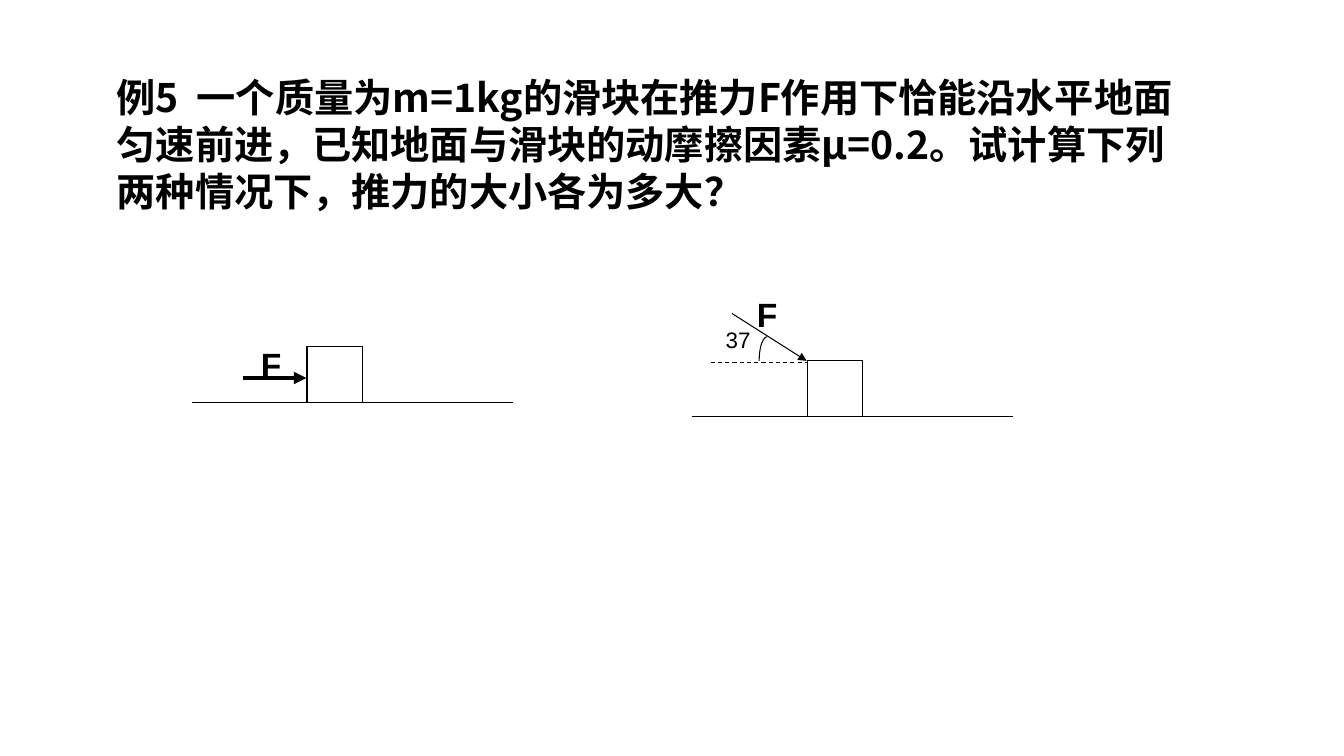
from pptx import Presentation, util as u
from pptx.dml.color import RGBColor
from pptx.enum import dml, shapes, text
from pptx.oxml.ns import qn
from lxml import etree

theme = {
    "ink": RGBColor(0, 0, 0),
    "head": "Noto Sans CJK SC",
    "body": "Arial",
    "title": 28,
    "force": 24,
    "angle": 16,
    "thin": 0.75,
    "thick": 3,
}

deck = Presentation()
deck.slide_width, deck.slide_height = u.Inches(13.33), u.Inches(7.5)
slide = deck.slides.add_slide(deck.slide_layouts[6])


def write(home, words, box, size, font, bold=True):
    label = home.add_textbox(*map(u.Inches, box))
    frame = label.text_frame
    frame.word_wrap = True
    frame.auto_size = text.MSO_AUTO_SIZE.SHAPE_TO_FIT_TEXT
    frame.text = words
    run = frame.paragraphs[0].runs[0]
    run.font.size, run.font.bold = u.Pt(size), bold
    run.font.name, run.font.color.rgb = font, theme["ink"]
    etree.SubElement(run.font._element, qn("a:ea")).set("typeface", font)
    return frame


def draw(home, start, end, width=theme["thin"], arrow=False, dash=False):
    line = home.add_connector(
        shapes.MSO_CONNECTOR.STRAIGHT, *map(u.Inches, (*start, *end)))
    line.line.width = u.Pt(width)
    line.line.color.rgb = theme["ink"]
    if dash:
        line.line.dash_style = dml.MSO_LINE.DASH
    if arrow:
        tip = etree.SubElement(line.line._get_or_add_ln(), qn("a:tailEnd"))
        tip.set("type", "triangle")
    etree.SubElement(line._element.spPr, qn("a:effectLst"))


title = write(
    slide.shapes,
    "例5  一个质量为m=1kg的滑块在推力F作用下恰能沿水平地面匀速前进，"
    "已知地面与滑块的动摩擦因素μ=0.2。试计算下列两种情况下，推力的大小各为多大？",
    (1.06, 0.63, 10.68, 1.51), theme["title"], theme["head"])
title.margin_top = u.Inches(0.1)
title.paragraphs[0].line_spacing = u.Pt(33.6)

side, span, lead = 0.55, 3.19, 1.145
scenes = []
for left, floor, tag in ((1.9, 3.99, (2.49, 3.36)), (6.86, 4.13, (7.41, 2.87))):
    home = slide.shapes.add_group_shape().shapes
    block = home.add_shape(
        shapes.MSO_SHAPE.RECTANGLE,
        *map(u.Inches, (left + lead, floor - side, side, side)))
    block.fill.background()
    block.line.color.rgb = theme["ink"]
    block.line.width = u.Pt(theme["thin"])
    block.shadow.inherit = False
    draw(home, (left, floor), (left + span, floor))
    write(home, "F", (*tag, 0.47, 0.5), theme["force"], theme["body"])
    scenes.append(home)

push, slant = scenes
draw(push, (2.41, 3.75), (3.04, 3.75), theme["thick"], arrow=True)
draw(slant, (7.26, 3.11), (8, 3.58), arrow=True)
draw(slant, (7.05, 3.6), (8, 3.6), dash=True)
write(slant, "37", (7.1, 3.19, 0.47, 0.37), theme["angle"], theme["body"], False)

arc = slant.add_shape(
    shapes.MSO_SHAPE.ARC, *map(u.Inches, (7.53, 3.34, 0.16, 0.48)))
arc.adjustments[0], arc.adjustments[1] = 108, 162
arc.fill.background()
arc.line.color.rgb = theme["ink"]
arc.line.width = u.Pt(theme["thin"])
arc.shadow.inherit = False

deck.save("out.pptx")
